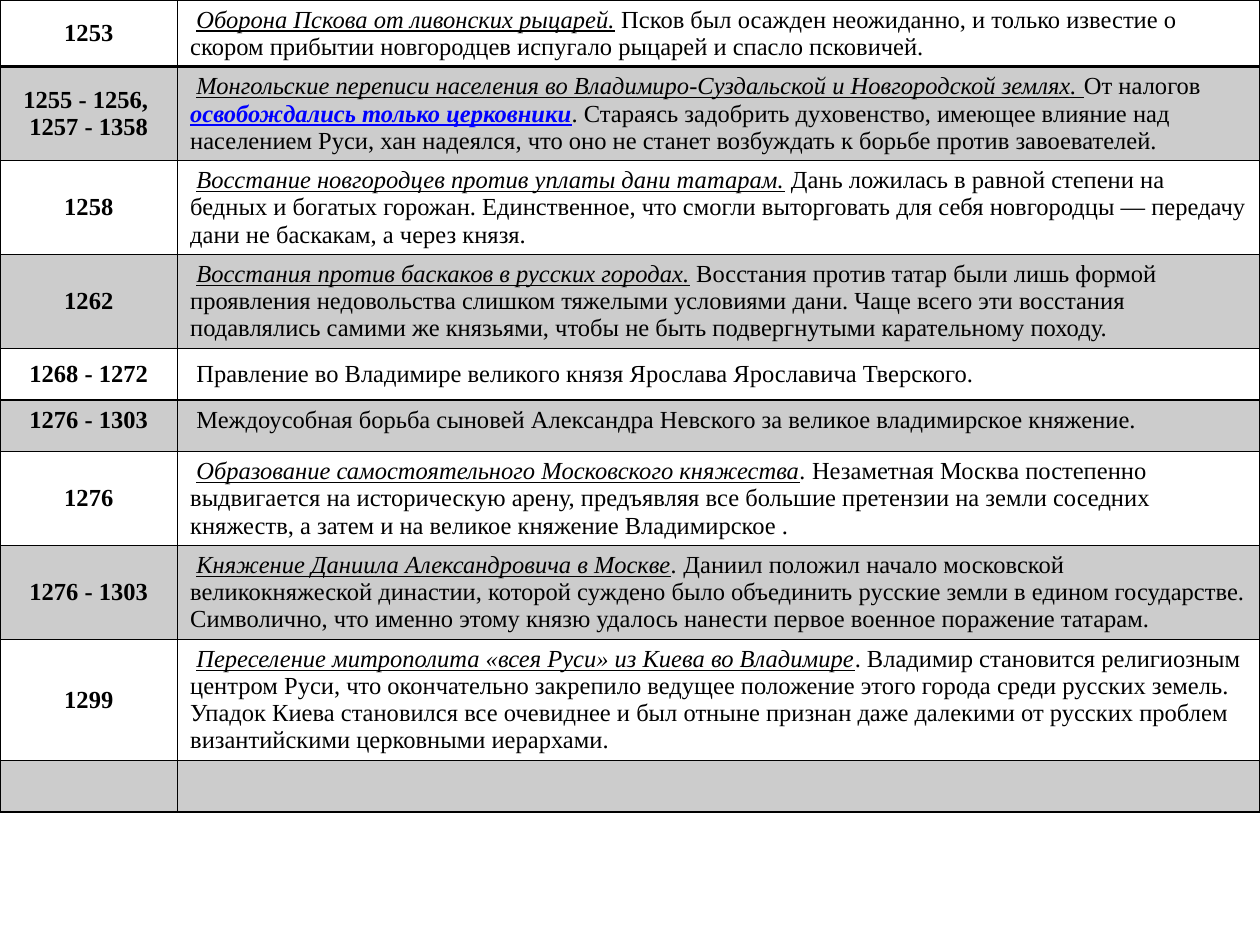
import dataclasses
import typing

import lxml.etree
import pptx
import pptx.dml.color
import pptx.enum.text
import pptx.oxml.ns
import pptx.util

Pt = pptx.util.Pt
qn = pptx.oxml.ns.qn
ANCHOR = pptx.enum.text.MSO_ANCHOR
ALIGN = pptx.enum.text.PP_ALIGN

COLOURS = {"text": "000000", "accent": "0000FF", "border": "000000", "band": "000000"}
BAND_ALPHA = 20
FONT = {"name": "Times New Roman", "size": Pt(14)}
STYLES = {
    "plain": {"bold": False, "italic": False, "underline": False},
    "title": {"bold": False, "italic": True, "underline": True},
    "stop": {"bold": False, "italic": True, "underline": False},
    "accent": {"bold": True, "italic": True, "underline": True},
    "date": {"bold": True},
}
INDENT = " "  # no-break space that opens every description
COLUMN_WIDTHS = (101.5, 618.5)
ROW_HEIGHT = 29.5
TABLE_HEIGHT = 491


class Phrase(typing.NamedTuple):
    text: str
    style: str = "plain"


@dataclasses.dataclass
class Event:
    dates: tuple[str, ...] = ()
    story: tuple[Phrase, ...] = ()
    date_anchor: ANCHOR = ANCHOR.MIDDLE
    story_anchor: ANCHOR = ANCHOR.TOP


EVENTS = [
    Event(("1253",), (
        Phrase("Оборона Пскова от ливонских рыцарей.", "title"),
        Phrase(" Псков был осажден неожиданно, и только известие о скором прибытии "
               "новгородцев испугало рыцарей и спасло псковичей."))),
    Event(("1255 - 1256, ", "1257 - 1358"), (
        Phrase("Монгольские переписи населения во Владимиро-Суздальской и "
               "Новгородской землях. ", "title"),
        Phrase("От налогов "),
        Phrase("освобождались только церковники", "accent"),
        Phrase(". Стараясь задобрить духовенство, имеющее влияние над населением Руси, "
               "хан надеялся, что оно не станет возбуждать к борьбе против завоевателей."))),
    Event(("1258",), (
        Phrase("Восстание новгородцев против уплаты дани татарам.", "title"),
        Phrase(" Дань ложилась в равной степени на бедных и богатых горожан. "
               "Единственное, что смогли выторговать для себя новгородцы — передачу "
               "дани не баскакам, а через князя."))),
    Event(("1262",), (
        Phrase("Восстания против баскаков в русских городах.", "title"),
        Phrase(" Восстания против татар были лишь формой проявления недовольства "
               "слишком тяжелыми условиями дани. Чаще всего эти восстания подавлялись "
               "самими же князьями, чтобы не быть подвергнутыми карательному походу."))),
    Event(("1268 - 1272",), (
        Phrase("Правление во Владимире великого князя Ярослава Ярославича Тверского."),),
        story_anchor=ANCHOR.MIDDLE),
    Event(("1276 - 1303",), (
        Phrase("Междоусобная борьба сыновей Александра Невского за великое "
               "владимирское княжение."),),
        date_anchor=ANCHOR.TOP),
    Event(("1276",), (
        Phrase("Образование самостоятельного Московского княжества", "title"),
        Phrase(".", "stop"),
        Phrase(" Незаметная Москва постепенно выдвигается на историческую арену, "
               "предъявляя все большие претензии на земли соседних княжеств, а затем "
               "и на великое княжение Владимирское ."))),
    Event(("1276 - 1303",), (
        Phrase("Княжение Даниила Александровича в Москве", "title"),
        Phrase(".", "stop"),
        Phrase(" Даниил положил начало московской великокняжеской династии, которой "
               "суждено было объединить русские земли в едином государстве. Символично, "
               "что именно этому князю удалось нанести первое военное поражение татарам."))),
    Event(("1299",), (
        Phrase("Переселение митрополита «всея Руси» из Киева во Владимире", "title"),
        Phrase(". Владимир становится религиозным центром Руси, что окончательно "
               "закрепило ведущее положение этого города среди русских земель. Упадок "
               "Киева становился все очевиднее и был отныне признан даже далекими от "
               "русских проблем византийскими церковными иерархами."))),
    Event(),
]


def add_run(paragraph, phrase: Phrase) -> None:
    run = paragraph.add_run()
    run.text = phrase.text
    for attribute, value in {**FONT, **STYLES[phrase.style]}.items():
        setattr(run.font, attribute, value)
    colour = COLOURS["accent" if phrase.style == "accent" else "text"]
    run.font.color.rgb = pptx.dml.color.RGBColor.from_string(colour)


def set_borders(cell, top: float, bottom: float) -> None:
    properties = cell._tc.get_or_add_tcPr()
    for side, width in {"L": 1, "R": 1, "T": top, "B": bottom}.items():
        line = lxml.etree.SubElement(properties, qn(f"a:ln{side}"), w=str(Pt(width)))
        fill = lxml.etree.SubElement(line, qn("a:solidFill"))
        lxml.etree.SubElement(fill, qn("a:srgbClr"), val=COLOURS["border"])


def set_band(cell, shaded: bool) -> None:
    """Fill the cell with translucent black, or leave it clear."""
    if not shaded:
        cell.fill.background()
        return
    cell.fill.solid()
    cell.fill.fore_color.rgb = pptx.dml.color.RGBColor.from_string(COLOURS["band"])
    colour = cell._tc.tcPr.find(f"{qn('a:solidFill')}/{qn('a:srgbClr')}")
    lxml.etree.SubElement(colour, qn("a:alpha"), val=str(BAND_ALPHA * 1000))


def fill_row(cells: tuple, event: Event, index: int) -> None:
    date_cell, story_cell = cells
    for cell in cells:
        set_borders(cell, top=2 if index == 1 else 1, bottom=2 if index == 0 else 1)
        set_band(cell, shaded=index % 2 == 1)
    date_cell.vertical_anchor = event.date_anchor
    story_cell.vertical_anchor = event.story_anchor
    for number, date in enumerate(event.dates):
        frame = date_cell.text_frame
        paragraph = frame.add_paragraph() if number else frame.paragraphs[0]
        paragraph.alignment = ALIGN.CENTER
        add_run(paragraph, Phrase(date, "date"))
    if event.story:
        for phrase in (Phrase(INDENT), *event.story):
            add_run(story_cell.text_frame.paragraphs[0], phrase)


def main() -> None:
    presentation = pptx.Presentation()
    presentation.slide_width, presentation.slide_height = Pt(720), Pt(540)
    slide = presentation.slides.add_slide(presentation.slide_layouts[6])
    timeline = slide.shapes.add_table(
        len(EVENTS), len(COLUMN_WIDTHS), Pt(0), Pt(0), Pt(720), Pt(TABLE_HEIGHT))
    table = timeline.table
    table.first_row = table.horz_banding = False
    for column, width in zip(table.columns, COLUMN_WIDTHS):
        column.width = Pt(width)
    for index, (row, event) in enumerate(zip(table.rows, EVENTS)):
        row.height = Pt(ROW_HEIGHT)
        fill_row(tuple(row.cells), event, index)
    timeline.height = Pt(TABLE_HEIGHT)
    presentation.save("out.pptx")


if __name__ == "__main__":
    main()
